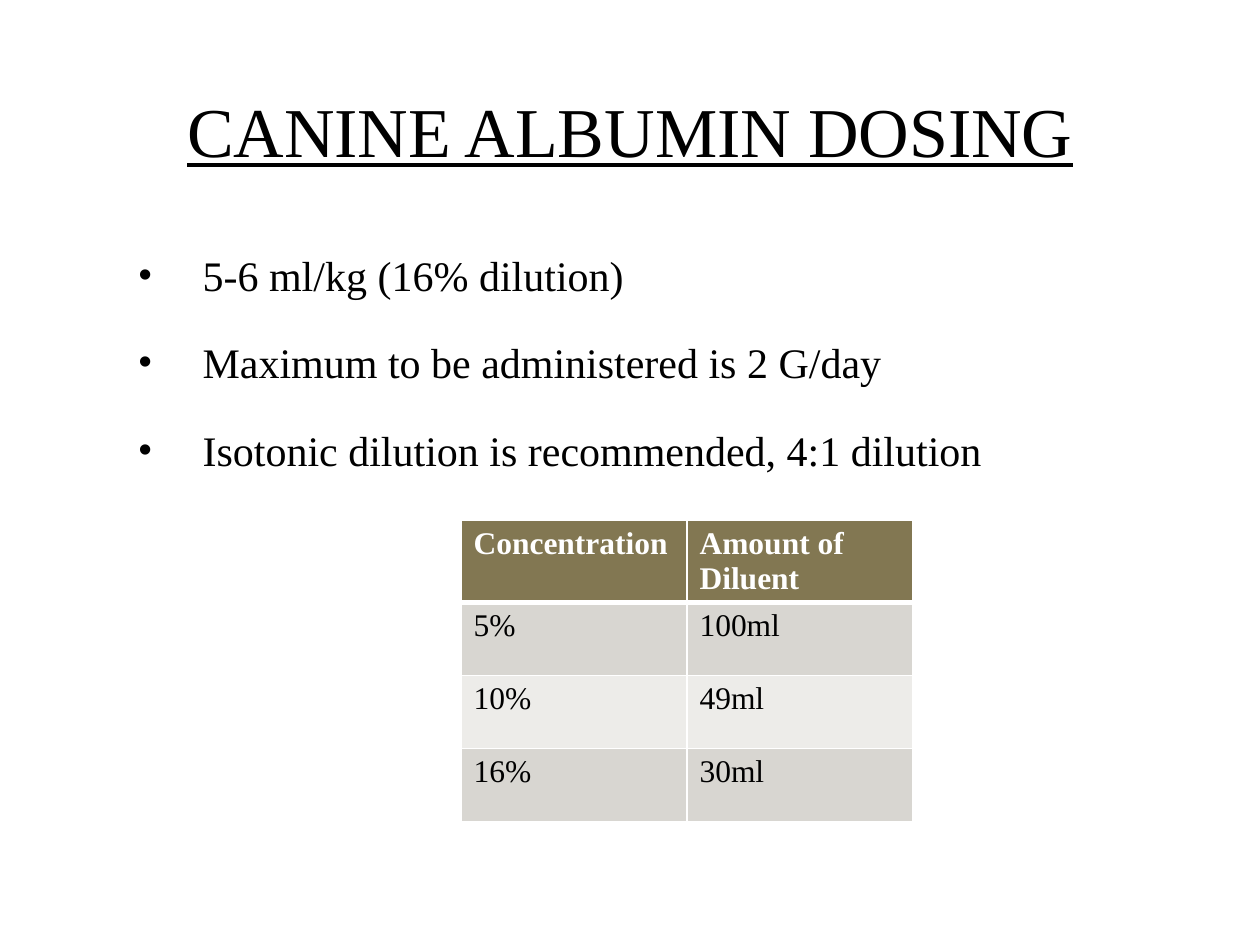
"""Build the canine albumin dosing slide."""
from lxml.etree import SubElement as Sub
from pptx import Presentation
from pptx.dml.color import RGBColor as RGB
from pptx.enum.text import MSO_ANCHOR as Anchor, MSO_AUTO_SIZE as Fit, PP_ALIGN as Align
from pptx.oxml.ns import qn
from pptx.util import Pt

TITLE = "CANINE ALBUMIN DOSING"
POINTS = [
    "5-6 ml/kg (16% dilution)",
    "Maximum to be administered is 2 G/day",
    "Isotonic dilution is recommended, 4:1 dilution",
]
ROWS = [
    ("Concentration", "Amount of Diluent"),
    ("5%", "100ml"),
    ("10%", "49ml"),
    ("16%", "30ml"),
]
HEIGHTS = [81, 73, 73, 73]
COL_W = 226
FACE = "Times New Roman"
BLACK = RGB(0, 0, 0)
WHITE = RGB(255, 255, 255)
HEAD = RGB(0x82, 0x77, 0x52)
BANDS = [RGB(0xED, 0xEC, 0xE9), RGB(0xD8, 0xD6, 0xD1)]
SCALE = 914400 / 126


def px(n):
    return round(n * SCALE)


def place(shape, *box):
    shape.left, shape.top, shape.width, shape.height = map(px, box)
    shape.text_frame.word_wrap = True
    shape.text_frame.auto_size = Fit.NONE


def style(para, size, color=BLACK, **more):
    font = para.font
    font.name, font.size = FACE, Pt(size)
    font.color.rgb = color
    for key, value in more.items():
        setattr(font, key, value)


def bullet(para):
    props = para._p.get_or_add_pPr()
    props.set("marL", str(px(64)))
    props.set("indent", str(-px(64)))
    Sub(props, qn("a:buSzPct"), val="90000")
    Sub(props, qn("a:buChar"), char="•")


def border(cell, head):
    props = cell._tc.get_or_add_tcPr()
    for side in "LRTB":
        width = 3 if head and side == "B" else 1
        line = Sub(props, qn("a:ln" + side), w=str(Pt(width)))
        fill = Sub(line, qn("a:solidFill"))
        Sub(fill, qn("a:srgbClr"), val=str(WHITE))


def add_title(slide):
    title = slide.shapes.title
    place(title, 126, 69, 1008, 120)
    frame = title.text_frame
    frame.text = TITLE
    frame.vertical_anchor = Anchor.MIDDLE
    para = frame.paragraphs[0]
    para.alignment = Align.CENTER
    style(para, 40, underline=True)


def add_list(slide):
    body = slide.placeholders[1]
    place(body, 126, 239, 1008, 316)
    frame = body.text_frame
    frame.margin_top = px(10)
    frame.text = "\n".join(POINTS)
    for i, para in enumerate(frame.paragraphs):
        para.space_before = Pt(21.25 if i else 0)
        bullet(para)
        style(para, 24)


def add_grid(slide):
    wide = len(ROWS[0])
    box = map(px, (461, 520, COL_W * wide, sum(HEIGHTS)))
    table = slide.shapes.add_table(len(ROWS), wide, *box).table
    table.horz_banding = False
    for col in table.columns:
        col.width = px(COL_W)
    for r, (texts, height) in enumerate(zip(ROWS, HEIGHTS)):
        table.rows[r].height = px(height)
        head = r == 0
        for c, text in enumerate(texts):
            cell = table.cell(r, c)
            cell.text = text
            border(cell, head)
            cell.fill.solid()
            cell.fill.fore_color.rgb = HEAD if head else BANDS[r % 2]
            style(cell.text_frame.paragraphs[0], 18, WHITE if head else BLACK, bold=head)


def main():
    deck = Presentation()
    deck.slide_width, deck.slide_height = px(1260), px(945)
    slide = deck.slides.add_slide(deck.slide_layouts[1])
    add_title(slide)
    add_list(slide)
    add_grid(slide)
    deck.save("out.pptx")


if __name__ == "__main__":
    main()
